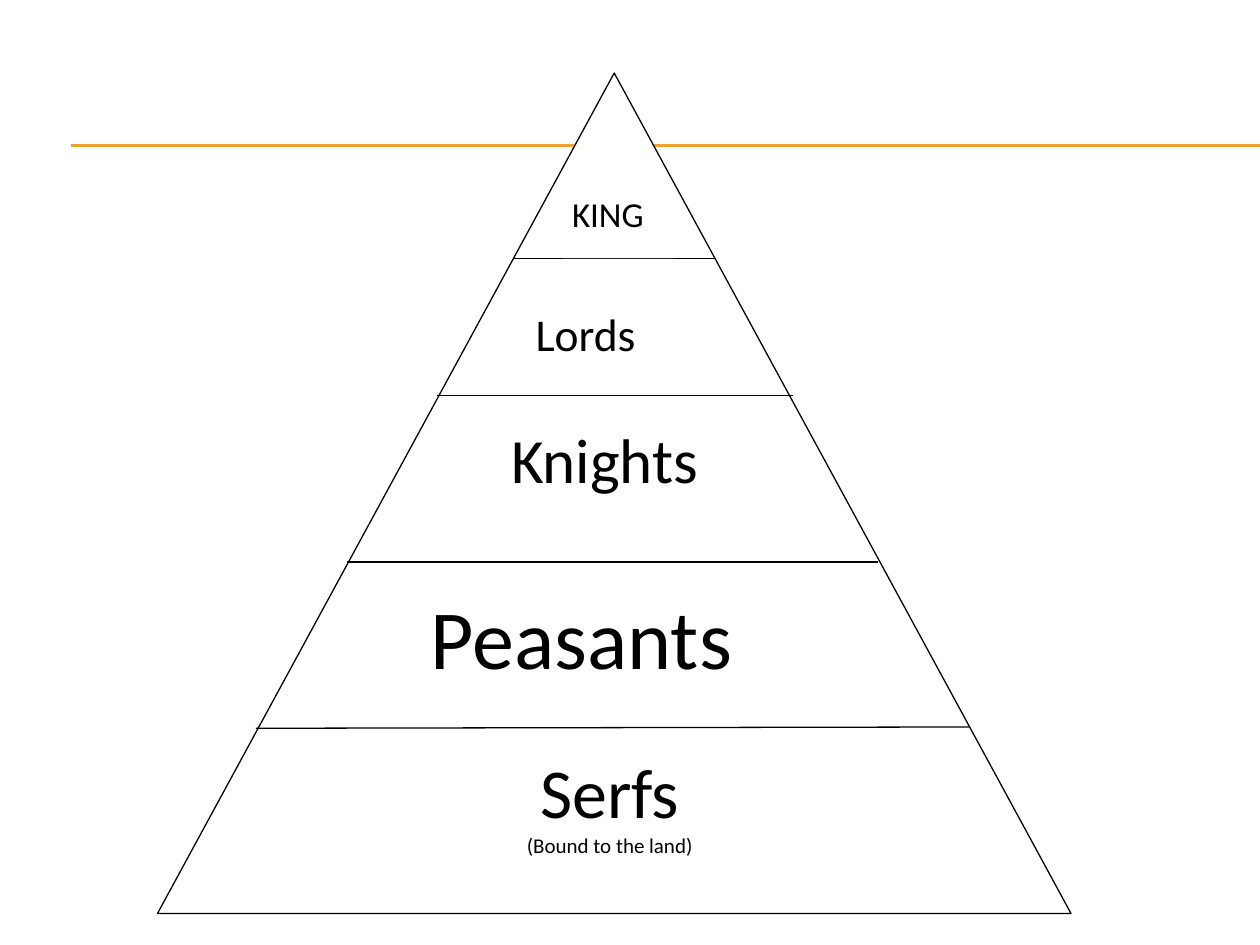
from dataclasses import dataclass

from lxml.etree import SubElement
from pptx import Presentation
from pptx.dml.color import RGBColor
from pptx.enum.shapes import MSO_CONNECTOR, MSO_SHAPE
from pptx.enum.text import MSO_ANCHOR, PP_ALIGN
from pptx.oxml.ns import qn
from pptx.shapes.autoshape import Shape
from pptx.shapes.shapetree import GroupShapes
from pptx.text.text import TextFrame
from pptx.util import Inches, Pt


@dataclass(frozen=True)
class Theme:
    font: str = "Calibri"
    ink: RGBColor = RGBColor(0, 0, 0)
    paper: RGBColor = RGBColor(255, 255, 255)
    accent: RGBColor = RGBColor(0xF0, 0xA2, 0x2E)
    line_width: float = 0.75
    king: int = 20
    lords: int = 26
    knights: int = 36
    peasants: int = 48
    serfs: int = 40
    note: int = 12


@dataclass(frozen=True)
class Rule:
    left: float
    top: float
    right: float
    bottom: float


@dataclass(frozen=True)
class Tier:
    name: str
    size: int
    left: float
    top: float
    width: float
    height: float
    indent: float = 0
    centered: bool = False
    space_after: int = 10
    note: str = ""


THEME = Theme()

HEADER_RULES = [Rule(0.56, 1.15, 10, 1.15), Rule(0.56, 1.16, 10, 1.16)]

DIVIDERS = [
    Rule(4.07, 2.05, 5.67, 2.05),
    Rule(3.47, 3.14, 6.29, 3.14),
    Rule(2.75, 4.46, 6.97, 4.46),
    Rule(2.03, 5.78, 7.69, 5.77),
]

TIERS = [
    Tier("KING", THEME.king, 4.46, 1.48, 0.89, 0.57),
    Tier("Lords", THEME.lords, 3.98, 2.38, 1.68, 0.6, indent=0.19),
    Tier("Knights", THEME.knights, 3.47, 3.29, 2.66, 1.06, centered=True),
    Tier("Peasants", THEME.peasants, 2.75, 4.6, 4.21, 1.02, indent=0.59),
    Tier("Serfs", THEME.serfs, 2.31, 5.89, 5.06, 1.28, centered=True,
         space_after=0, note="(Bound to the land)"),
]


def add_rule(shapes: GroupShapes, rule: Rule, color: RGBColor) -> None:
    """Draw one thin straight line without a shadow."""
    line = shapes.add_connector(
        MSO_CONNECTOR.STRAIGHT, Inches(rule.left), Inches(rule.top),
        Inches(rule.right), Inches(rule.bottom))
    line.line.color.rgb = color
    line.line.width = Pt(THEME.line_width)
    SubElement(line.element.spPr, qn("a:effectLst"))


def add_panel(shapes: GroupShapes, kind: MSO_SHAPE, left: float, top: float,
              width: float, height: float) -> Shape:
    """Draw a plain paper-coloured shape with no outline."""
    panel = shapes.add_shape(
        kind, Inches(left), Inches(top), Inches(width), Inches(height))
    panel.shadow.inherit = False
    panel.fill.solid()
    panel.fill.fore_color.rgb = THEME.paper
    panel.line.fill.background()
    return panel


def write_text(frame: TextFrame, text: str, *, size: int, centered: bool = False,
               space_after: int = 0, first: bool = True) -> None:
    """Write one formatted paragraph into a text frame."""
    para = frame.paragraphs[0] if first else frame.add_paragraph()
    para.alignment = PP_ALIGN.CENTER if centered else PP_ALIGN.LEFT
    para.space_after = Pt(space_after)
    span = para.add_run()
    span.text = text
    span.font.name = THEME.font
    span.font.size = Pt(size)
    span.font.color.rgb = THEME.ink


def add_tier(shapes: GroupShapes, tier: Tier) -> None:
    """Draw the label box of one social rank."""
    box = add_panel(shapes, MSO_SHAPE.RECTANGLE,
                    tier.left, tier.top, tier.width, tier.height)
    frame = box.text_frame
    frame.word_wrap = True
    frame.vertical_anchor = MSO_ANCHOR.TOP
    frame.margin_left = Inches(0.08 + tier.indent)
    frame.margin_right = Inches(0.08)
    write_text(frame, tier.name, size=tier.size, centered=tier.centered,
               space_after=tier.space_after)
    if tier.note:
        write_text(frame, tier.note, size=THEME.note, centered=tier.centered,
                   first=False)


def main() -> None:
    """Build the feudal pyramid slide."""
    deck = Presentation()
    deck.slide_width = Inches(10)
    deck.slide_height = Inches(7.5)
    page = deck.slides.add_slide(deck.slide_layouts[6])
    for rule in HEADER_RULES:
        add_rule(page.shapes, rule, THEME.accent)
    pyramid = page.shapes.add_group_shape().shapes
    outline = add_panel(pyramid, MSO_SHAPE.ISOSCELES_TRIANGLE,
                        1.25, 0.58, 7.25, 6.67)
    outline.line.color.rgb = THEME.ink
    outline.line.width = Pt(THEME.line_width)
    for divider in DIVIDERS:
        add_rule(pyramid, divider, THEME.ink)
    for tier in TIERS:
        add_tier(pyramid, tier)
    deck.save("out.pptx")


if __name__ == "__main__":
    main()
